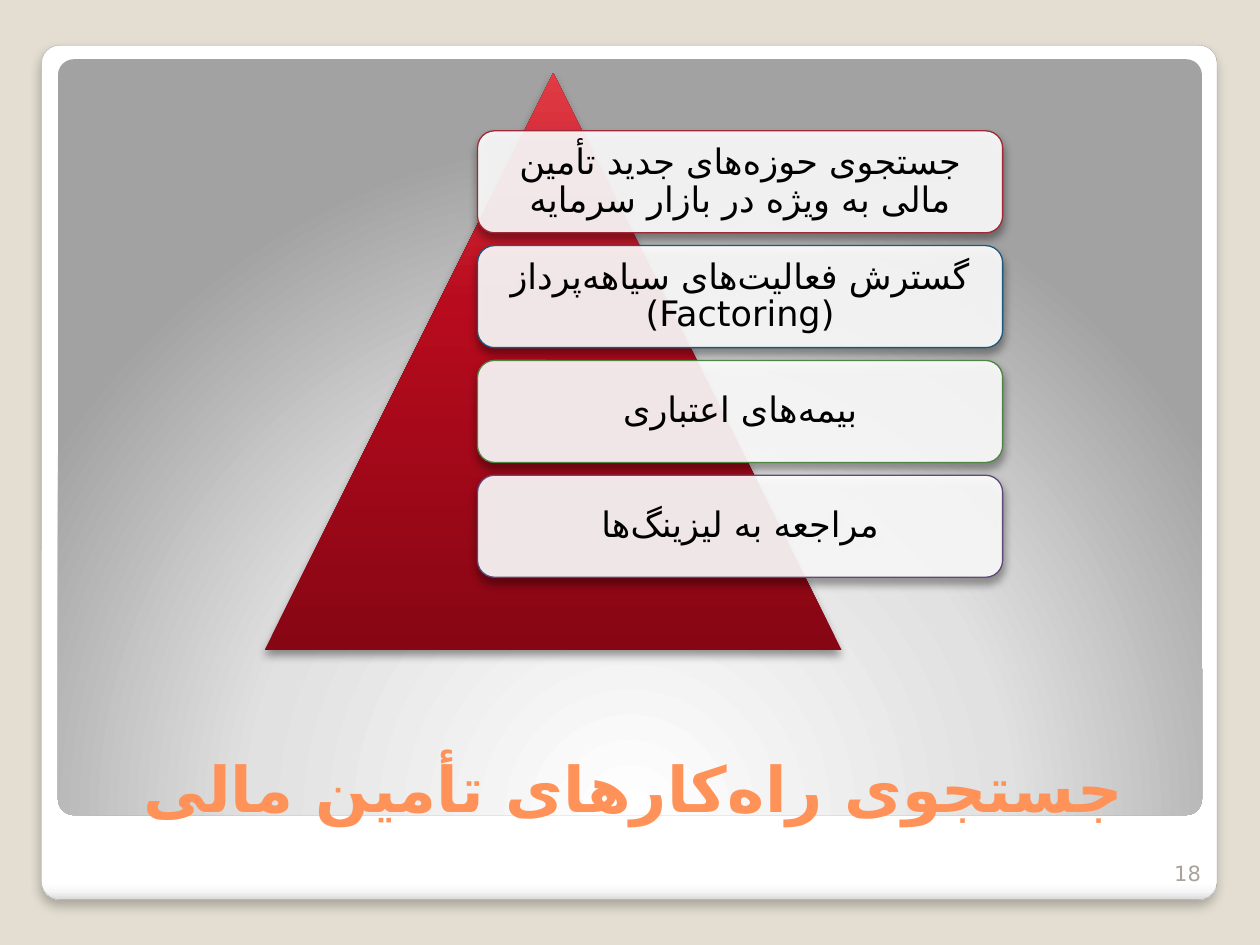
from lxml import etree
from pptx import Presentation
from pptx import util as u
from pptx.dml.color import RGBColor
from pptx.enum import shapes, text
from pptx.oxml.ns import qn

FONT = "DejaVu Sans"
BACKGROUND = "E3DED1"
NON_JOINER = chr(0x200C)  # typed as | in the wording below
TITLE = "جستجوی راه|کارهای تأمین مالی"
PAGE = "18"
SOLUTIONS = [
    ("جستجوی حوزه|های جدید تأمین مالی به ویژه در بازار سرمایه", "9F2936"),
    ("گسترش فعالیت|های سیاهه|پرداز (Factoring)", "1B587C"),
    ("بیمه|های اعتباری", "4E8542"),
    ("مراجعه به لیزینگ|ها", "604878"),
]
FRAME_STOPS = [(0, "FFFFFF"), (98, "FFFFFF"), (99, "F7F7F7"), (100, "DADADA")]
PANEL_STOPS = [(0, "FFFFFF"), (55, "E1E1E1"), (100, "A2A2A2")]
PYRAMID_STOPS = [(0, "870614"), (60, "B80B1E"), (100, "E13C45")]

PYRAMID_LEFT, PYRAMID_TOP, PYRAMID_SIDE = 2.1, 0.58, 4.58
BOX_LEFT, BOX_WIDTH = 3.79, 0.91 * PYRAMID_SIDE
BOX_TOP = PYRAMID_TOP + PYRAMID_SIDE / 10
BOX_HEIGHT = 0.81
BOX_PITCH = BOX_HEIGHT * 9 / 8  # the gap is an eighth of a box


def rgb(hex_colour):
    return RGBColor.from_string(hex_colour)


def add(parent, tag, **attributes):
    child = etree.SubElement(parent, qn(tag))
    for name, value in attributes.items():
        child.set(name, str(value))
    return child


def add_colour(parent, hex_colour, alpha=100):
    colour = add(parent, "a:srgbClr", val=hex_colour)
    if alpha < 100:
        add(colour, "a:alpha", val=alpha * 1000)


def add_form(slide, kind, box, line=None, line_width=0.75, corner=None):
    form = slide.shapes.add_shape(kind, *map(u.Inches, box))
    form.shadow.inherit = False
    if corner is not None:
        form.adjustments[0] = corner
    if line:
        form.line.color.rgb = rgb(line)
        form.line.width = u.Pt(line_width)
    else:
        form.line.fill.background()
    return form


def fill_gradient(form, stops, angle=None, centre=None):
    """Fill along an angle in degrees, or in circles around a rectangle in percent."""
    form.fill.gradient()
    gradient = form.element.spPr.find(qn("a:gradFill"))
    for child in list(gradient):
        gradient.remove(child)
    stop_list = add(gradient, "a:gsLst")
    for position, colour in stops:
        add_colour(add(stop_list, "a:gs", pos=position * 1000), colour)
    if centre:
        circle = add(gradient, "a:path", path="circle")
        sides = {side: share * 1000 for side, share in zip("ltrb", centre)}
        add(circle, "a:fillToRect", **sides)
    else:
        add(gradient, "a:lin", ang=angle * 60000, scaled=0)


def fill_translucent(form, colour, alpha):
    form.fill.solid()
    form.fill.fore_color.rgb = rgb(colour)
    solid = form.element.spPr.find(qn("a:solidFill"))
    add(solid[0], "a:alpha", val=alpha * 1000)


def cast_shadow(form, alpha=40, blur=5.2, distance=3):
    effects = form.element.spPr.find(qn("a:effectLst"))
    shadow = add(effects, "a:outerShdw", blurRad=u.Pt(blur), dist=u.Pt(distance),
                 dir=90 * 60000, rotWithShape=0)
    add_colour(shadow, "000000", alpha)


def write(form, words, size, colour="000000", bold=False, align=text.PP_ALIGN.CENTER,
          anchor=text.MSO_ANCHOR.BOTTOM, spacing=None, inset=None):
    """Set right-to-left text in a shape or text box."""
    frame = form.text_frame
    frame.word_wrap = True
    frame.vertical_anchor = anchor
    if inset is not None:
        frame.margin_left = frame.margin_right = u.Inches(inset)
        frame.margin_top = frame.margin_bottom = u.Inches(inset)
    paragraph = frame.paragraphs[0]
    paragraph.alignment = align
    paragraph.line_spacing = spacing
    paragraph._p.get_or_add_pPr().set("rtl", "1")
    run = paragraph.add_run()
    run.text = words.replace("|", NON_JOINER)
    run.font.size = u.Pt(size)
    run.font.bold = bold
    run.font.name = FONT
    run.font.color.rgb = rgb(colour)
    add(run._r.get_or_add_rPr(), "a:cs", typeface=FONT)


def add_text(slide, words, box, **style):
    write(slide.shapes.add_textbox(*map(u.Inches, box)), words, **style)


def main():
    deck = Presentation()
    deck.slide_width, deck.slide_height = u.Inches(10), u.Inches(7.5)
    slide = deck.slides.add_slide(deck.slide_layouts[6])
    slide.background.fill.solid()
    slide.background.fill.fore_color.rgb = rgb(BACKGROUND)
    rounded = shapes.MSO_SHAPE.ROUNDED_RECTANGLE

    frame = add_form(slide, rounded, (0.33, 0.36, 9.33, 6.78),
                     line="A4A4A4", line_width=0.16, corner=0.021)
    fill_gradient(frame, FRAME_STOPS, angle=90)
    cast_shadow(frame, alpha=25, blur=6, distance=4)

    panel = add_form(slide, rounded, (0.46, 0.47, 9.08, 6), corner=0.021)
    fill_gradient(panel, PANEL_STOPS, centre=(50, 175, 50, -75))

    add_text(slide, TITLE, (0.55, 5.45, 8.95, 1.15), size=36, colour="FF9258", bold=True)

    pyramid = add_form(slide, shapes.MSO_SHAPE.ISOSCELES_TRIANGLE,
                       (PYRAMID_LEFT, PYRAMID_TOP, PYRAMID_SIDE, PYRAMID_SIDE))
    fill_gradient(pyramid, PYRAMID_STOPS, angle=270)
    cast_shadow(pyramid)

    for row, (solution, outline) in enumerate(SOLUTIONS):
        top = BOX_TOP + row * BOX_PITCH
        card = add_form(slide, rounded, (BOX_LEFT, top, BOX_WIDTH, BOX_HEIGHT), line=outline)
        fill_translucent(card, "FFFFFF", 90)
        cast_shadow(card)
        write(card, solution, size=20, anchor=text.MSO_ANCHOR.MIDDLE, spacing=0.9, inset=0.08)

    add_text(slide, PAGE, (9.13, 6.68, 0.5, 0.4), size=12, colour="A8A49B",
             align=text.PP_ALIGN.RIGHT)
    deck.save("out.pptx")


if __name__ == "__main__":
    main()
